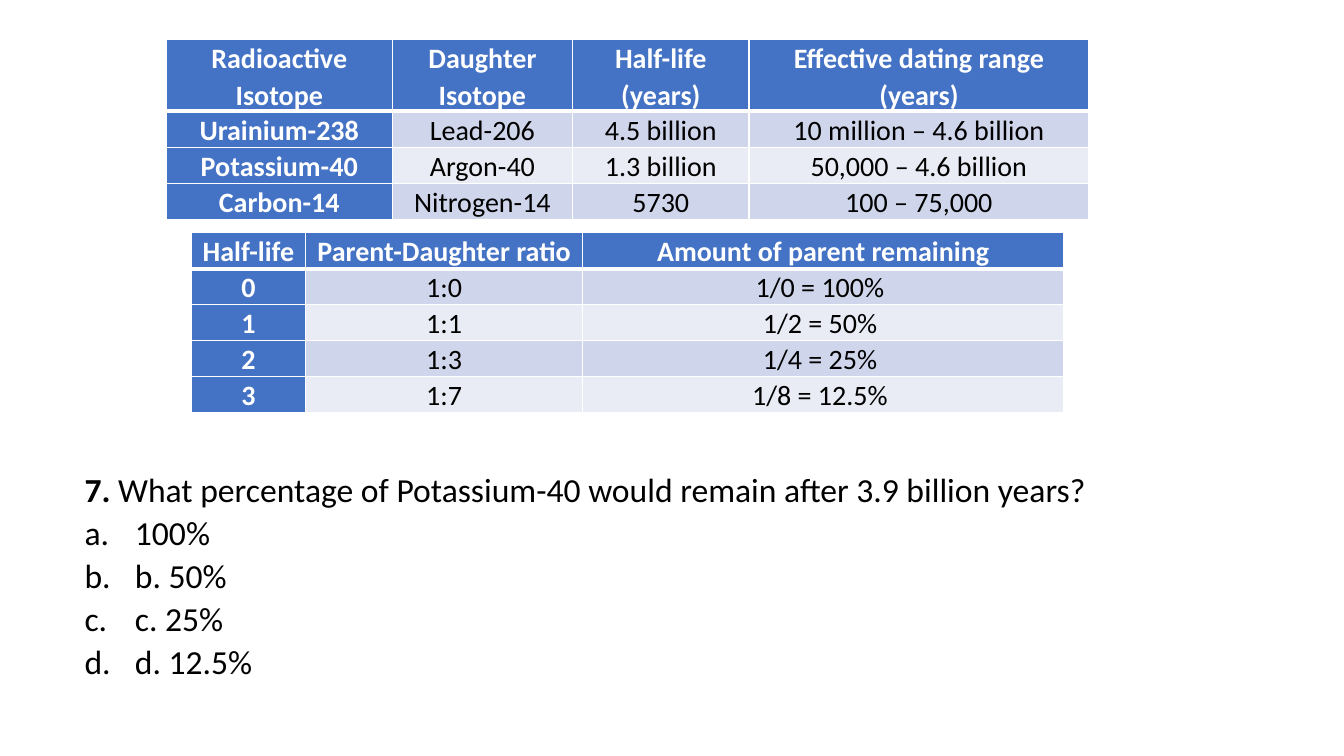
from dataclasses import dataclass

from lxml.etree import SubElement
from pptx import Presentation
from pptx.dml.color import RGBColor
from pptx.enum.text import MSO_AUTO_SIZE, PP_ALIGN
from pptx.oxml import parse_xml
from pptx.oxml.ns import nsdecls, qn
from pptx.util import Inches, Pt


@dataclass(frozen=True)
class Theme:
    font: str = "Calibri"
    table_size: int = 20
    question_size: int = 24
    line_spacing: float = 1.07
    accent: str = "4472C4"
    bands: tuple = ("CFD5EA", "E9EBF5")
    light: str = "FFFFFF"
    dark: str = "000000"


class SlideBuilder:
    def __init__(self, s, theme):
        self.s = s
        self.theme = theme

    def run(self, p, text, size, color, bold=False):
        p.line_spacing = self.theme.line_spacing
        r = p.add_run()
        r.text = text
        r.font.name = self.theme.font
        r.font.size = Pt(size)
        r.font.bold = bold
        r.font.color.rgb = RGBColor.from_string(color)

    def borders(self, cell, bottom):
        """Draw the cell's edges; they precede the fill in the cell properties."""
        tc_pr = cell._tc.get_or_add_tcPr()
        edges = (("lnL", 1), ("lnR", 1), ("lnT", 1), ("lnB", bottom))
        for i, (tag, width) in enumerate(edges):
            tc_pr.insert(i, parse_xml(
                f'<a:{tag} {nsdecls("a")} w="{Pt(width)}"><a:solidFill>'
                f'<a:srgbClr val="{self.theme.light}"/></a:solidFill></a:{tag}>'))

    def cell(self, cell, text, row, col):
        th = self.theme
        heading = row == 0 or col == 0
        cell.margin_left = cell.margin_right = Inches(0.07)
        cell.margin_top = cell.margin_bottom = 0
        cell.fill.solid()
        cell.fill.fore_color.rgb = RGBColor.from_string(
            th.accent if heading else th.bands[(row - 1) % 2])
        # The heading row has a heavy rule below, shared with the next row's top
        self.borders(cell, 3 if row == 0 else 1)
        if row == 1:
            cell._tc.tcPr.find(qn("a:lnT")).set("w", str(Pt(3)))
        p = cell.text_frame.paragraphs[0]
        p.alignment = PP_ALIGN.CENTER
        self.run(p, text, th.table_size, th.light if heading else th.dark, heading)

    def table(self, left, top, col_widths, rows, header_lines=1):
        line = 0.35
        height = line * (len(rows) - 1 + header_lines)
        table = self.s.shapes.add_table(
            len(rows), len(col_widths), Inches(left), Inches(top),
            Inches(sum(col_widths)), Inches(height)).table
        for column, width in zip(table.columns, col_widths):
            column.width = Inches(width)
        for i, values in enumerate(rows):
            table.rows[i].height = Inches(line * (header_lines if i == 0 else 1))
            for j, text in enumerate(values):
                self.cell(table.cell(i, j), text, i, j)

    def question(self, left, top, width, height, number, text, answers):
        th = self.theme
        tf = self.s.shapes.add_textbox(
            Inches(left), Inches(top), Inches(width), Inches(height)).text_frame
        tf.word_wrap = True
        tf.auto_size = MSO_AUTO_SIZE.SHAPE_TO_FIT_TEXT
        p = tf.paragraphs[0]
        self.run(p, number, th.question_size, th.dark, True)
        self.run(p, text, th.question_size, th.dark)
        for answer in answers:
            p = tf.add_paragraph()
            self.run(p, answer, th.question_size, th.dark)
            # Lettered list with a hanging indent
            p_pr = p._p.get_or_add_pPr()
            p_pr.set("marL", str(Inches(0.5)))
            p_pr.set("indent", str(Inches(-0.5)))
            SubElement(p_pr, qn("a:buFont"), typeface="+mj-lt")
            SubElement(p_pr, qn("a:buAutoNum"), type="alphaLcPeriod")


def main():
    prs = Presentation()
    prs.slide_width, prs.slide_height = Inches(13.33), Inches(7.5)
    s = prs.slides.add_slide(prs.slide_layouts[6])
    builder = SlideBuilder(s, Theme())

    # Question and answers
    builder.question(
        0.74, 4.57, 11.01, 2.26, "7. ",
        "What percentage of Potassium-40 would remain after 3.9 billion years?",
        ["100%", "b. 50%", "c. 25%", "d. 12.5%"])

    # Isotopes and their dating ranges
    builder.table(1.65, 0.39, [2.24, 1.79, 1.75, 3.37], [
        ["Radioactive Isotope", "Daughter Isotope", "Half-life (years)",
         "Effective dating range (years)"],
        ["Urainium-238", "Lead-206", "4.5 billion", "10 million – 4.6 billion"],
        ["Potassium-40", "Argon-40", "1.3 billion", "50,000 – 4.6 billion"],
        ["Carbon-14", "Nitrogen-14", "5730", "100 – 75,000"],
    ], header_lines=2)

    # Parent remaining after each half-life
    builder.table(1.9, 2.31, [1.13, 2.75, 4.77], [
        ["Half-life", "Parent-Daughter ratio", "Amount of parent remaining"],
        ["0", "1:0", "1/0 = 100% "],
        ["1", "1:1", "1/2 = 50% "],
        ["2", "1:3", "1/4 = 25% "],
        ["3", "1:7", "1/8 = 12.5% "],
    ])

    prs.save("out.pptx")


if __name__ == "__main__":
    main()
